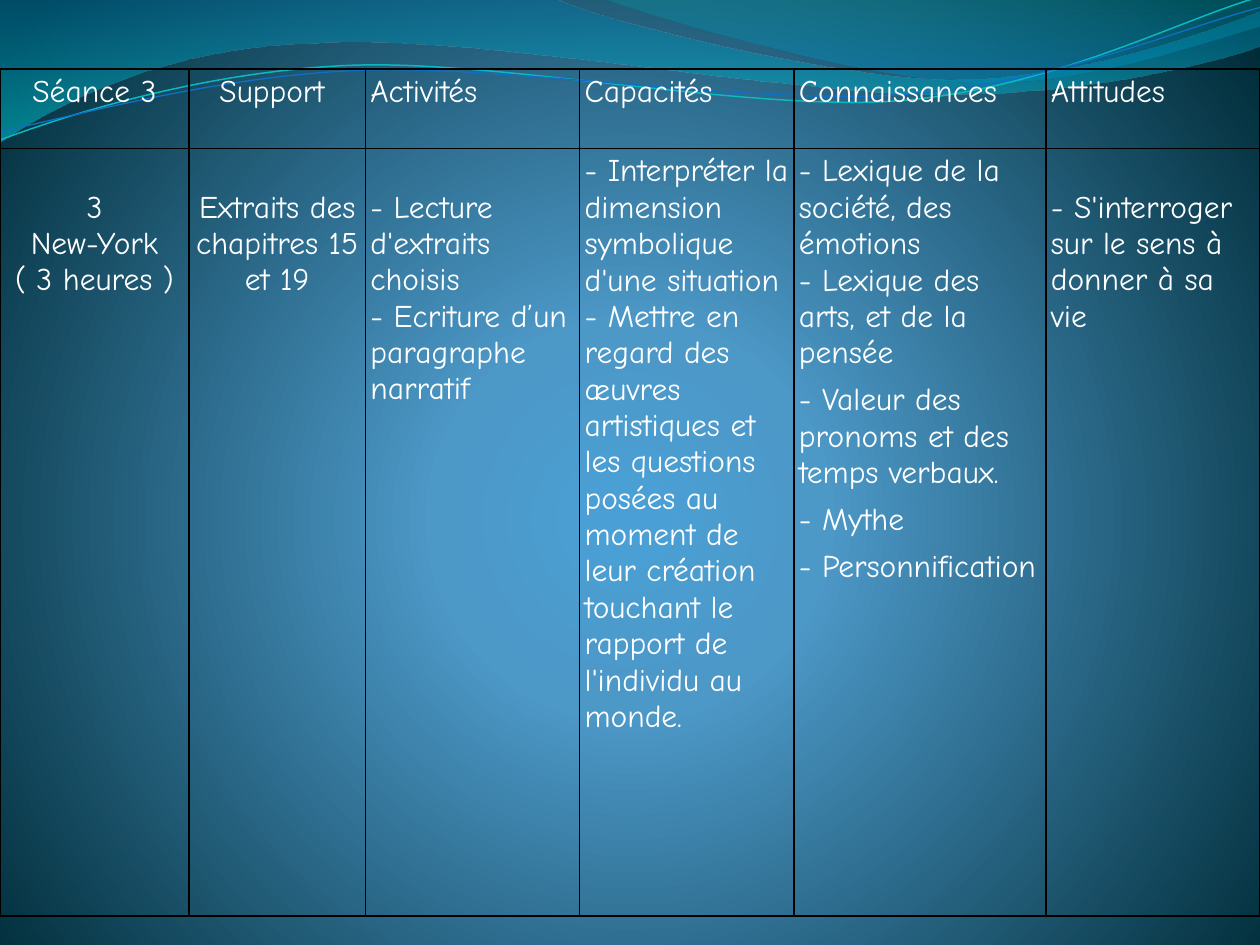
from pptx import Presentation
from pptx.dml.color import RGBColor
from pptx.enum.text import PP_ALIGN
from pptx.oxml import parse_xml
from pptx.oxml.ns import nsdecls, qn
from pptx.util import Pt

CENTER, LEFT = PP_ALIGN.CENTER, PP_ALIGN.LEFT
FONT = "Comic Neue"
INSET = 2.9
DROP = 20.7

WIDTHS = [108, 100.8, 122.4, 122.4, 144, 122.4]
HEIGHTS = [45.4, 438.5]
HEADS = ["Séance 3", "Support ", "Activités", "Capacités",
         "Connaissances", "Attitudes"]
BODY = [
    ["3", "New-York", "( 3 heures )"],
    ["Extraits des chapitres 15 et 19"],
    ["- Lecture d'extraits choisis", "- Ecriture d’un paragraphe narratif"],
    ["- Interpréter la dimension symbolique d'une situation",
     "- Mettre en regard des æuvres artistiques et les questions posées au "
     "moment de leur création touchant le rapport de l'individu au monde."],
    ["- Lexique de la société, des émotions",
     "- Lexique des arts, et de la pensée",
     "- Valeur des pronoms et des temps verbaux.",
     "- Mythe", "- Personnification"],
    ["- S'interroger sur le sens à donner à sa vie"],
]
CENTERED = (0, 1)
LOWERED = (0, 1, 2, 5)
SPACED = 4

BACK = [(0, "4AA0D6", 100), (25, "4C98C7", 100), (100, "002C38", 100)]
GLOW = ('<a:path path="circle"><a:fillToRect l="10000" t="110000" '
        'r="10000" b="100000"/></a:path>')
DOWN = '<a:lin ang="5400000" scaled="0"/>'

# Each step holds one point for a straight side, three for a curve.
WAVES = [
    ([(0, 0)], [
        [(317, -0.7)],
        [(343, 12), (478, 45.4), (546, 45.4)],
        [(614, 45.4), (690, 18.7), (720, 6.5)],
        [(720.7, 26)],
        [(708, 31.7), (626, 54.7), (537, 54)],
        [(448, 54), (275, 20.2), (185, 24.5)],
        [(93, 26), (33, 59.8), (-0.7, 81.4)],
    ], [(0, "0074A1", 45), (100, "00C6CF", 55)]),
    ([(345, -0.7)], [
        [(366.5, 8), (491, 44.6), (553.7, 46.8)],
        [(616.3, 49.7), (692, 23), (720, 15)],
        [(720, 0)],
    ], [(0, "00A1A9", 30), (80, "008BBF", 45)]),
]
CURVES = [
    ([(0, 80)], [
        [(34.6, 67), (113.8, 41), (199.4, 37.4)],
        [(284.4, 33.8), (427, 64), (513.4, 57.6)],
        [(599.8, 51), (675.4, 10.8), (718.6, -1.4)],
    ], "0AB8BF", 0.85),
    ([(0, 75)], [
        [(33.8, 69), (118, 44), (203.8, 40.3)],
        [(290.2, 36.7), (430, 60.5), (516.2, 54)],
        [(602, 48.2), (677.5, 15), (720, 4.3)],
    ], "0F6FC6", 0.75),
]


def color(code):
    return RGBColor.from_string(code)


def shade(fill, host, stops, tail):
    fill.gradient()
    old = host.element.find(".//" + qn("a:gradFill"))
    marks = "".join(
        f'<a:gs pos="{pos * 1000}"><a:srgbClr val="{code}">'
        f'<a:alpha val="{alpha * 1000}"/></a:srgbClr></a:gs>'
        for pos, code, alpha in stops)
    new = parse_xml(f'<a:gradFill {nsdecls("a")} rotWithShape="1">'
                    f'<a:gsLst>{marks}</a:gsLst>{tail}</a:gradFill>')
    old.getparent().replace(old, new)


def outline(slide, start, steps, close):
    x, y = start[0]
    pen = slide.shapes.build_freeform(Pt(x), Pt(y))
    pen.add_line_segments(
        [(Pt(x), Pt(y)) for step in steps for x, y in step], close=close)
    shape = pen.convert_to_shape()
    shape.shadow.inherit = False
    sides = iter(shape.element.findall(".//" + qn("a:lnTo")))
    for step in steps:
        group = [next(sides) for _ in step]
        if len(group) == 3:
            curve = parse_xml(f'<a:cubicBezTo {nsdecls("a")}/>')
            group[0].addprevious(curve)
            for side in group:
                curve.append(side[0])
                side.getparent().remove(side)
    return shape


def wave(slide, start, steps, stops):
    shape = outline(slide, start, steps, True)
    shade(shape.fill, shape, stops, DOWN)
    shape.line.fill.background()


def curve(slide, start, steps, code, width):
    shape = outline(slide, start, steps, False)
    shape.fill.background()
    shape.line.color.rgb = color(code)
    shape.line.width = Pt(width)


def border(cell, code, width):
    props = cell._tc.get_or_add_tcPr()
    for spot, side in enumerate("LRTB"):
        props.insert(spot, parse_xml(
            f'<a:ln{side} {nsdecls("a")} w="{Pt(width)}"><a:solidFill>'
            f'<a:srgbClr val="{code}"/></a:solidFill></a:ln{side}>'))


def write(cell, texts, align, top, after):
    cell.margin_left = cell.margin_right = cell.margin_bottom = Pt(INSET)
    cell.margin_top = Pt(top)
    cell.fill.background()
    border(cell, "000000", 1)
    frame = cell.text_frame
    for num, text in enumerate(texts):
        para = frame.add_paragraph() if num else frame.paragraphs[0]
        para.alignment = align
        para.space_after = Pt(after if num else 0)
        run = para.add_run()
        run.text = text
        run.font.size = Pt(18)
        run.font.name = FONT
        run.font.color.rgb = color("FFFFFF")


def grid(slide):
    frame = slide.shapes.add_table(
        len(HEIGHTS), len(WIDTHS), Pt(0), Pt(39.5),
        Pt(sum(WIDTHS)), Pt(sum(HEIGHTS)))
    table = frame.table
    table.first_row = table.horz_banding = False
    for row, height in zip(table.rows, HEIGHTS):
        row.height = Pt(height)
    for col, width in enumerate(WIDTHS):
        table.columns[col].width = Pt(width)
        align = CENTER if col in CENTERED else LEFT
        top = INSET + (DROP if col in LOWERED else 0)
        after = 6 if col == SPACED else 0
        write(table.cell(0, col), [HEADS[col]], align, INSET, 0)
        write(table.cell(1, col), BODY[col], align, top, after)


def main():
    deck = Presentation()
    deck.slide_width, deck.slide_height = Pt(720), Pt(540)
    slide = deck.slides.add_slide(deck.slide_layouts[6])
    shade(slide.background.fill, slide, BACK, GLOW)
    for item in WAVES:
        wave(slide, *item)
    for item in CURVES:
        curve(slide, *item)
    grid(slide)
    deck.save("out.pptx")


if __name__ == "__main__":
    main()
